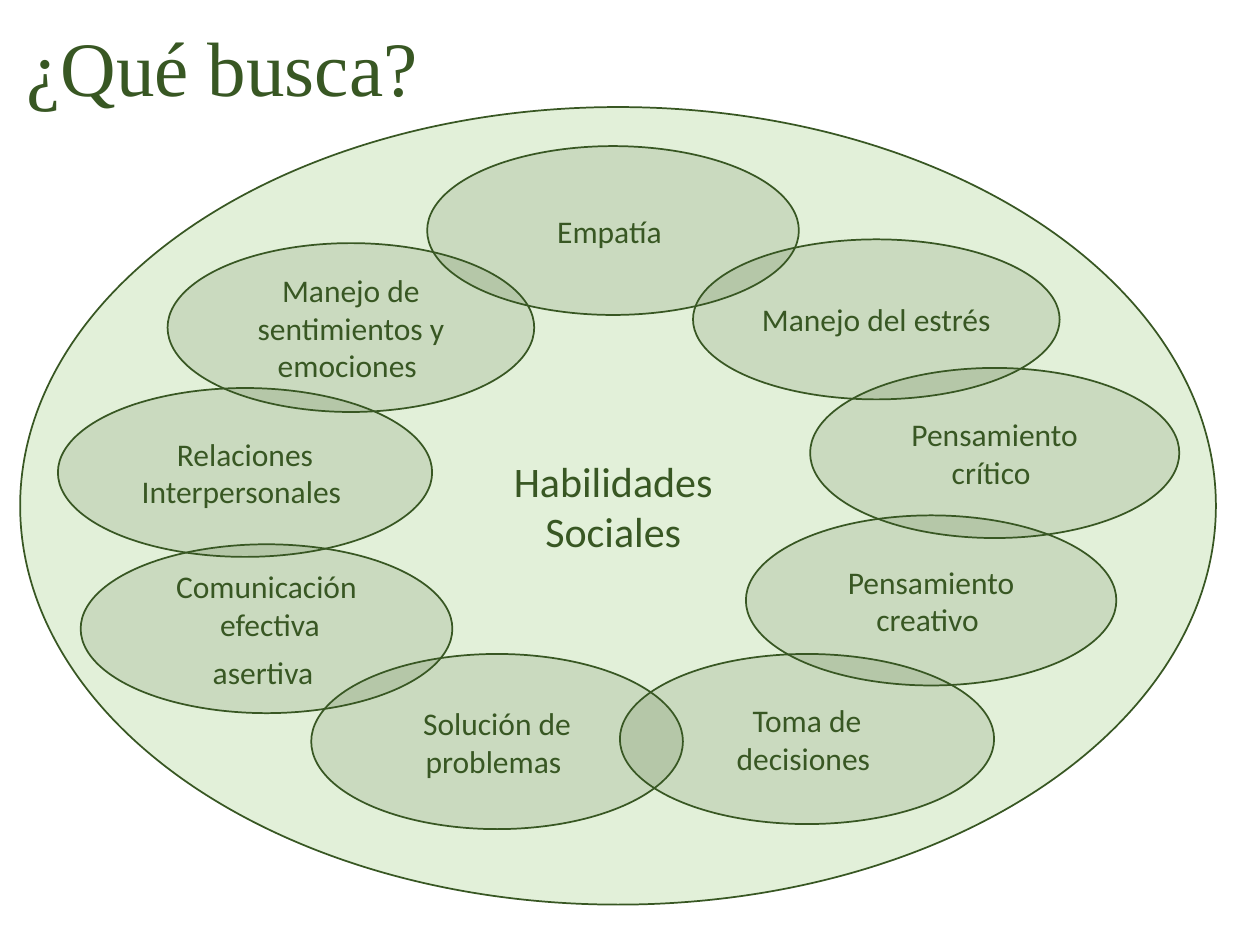
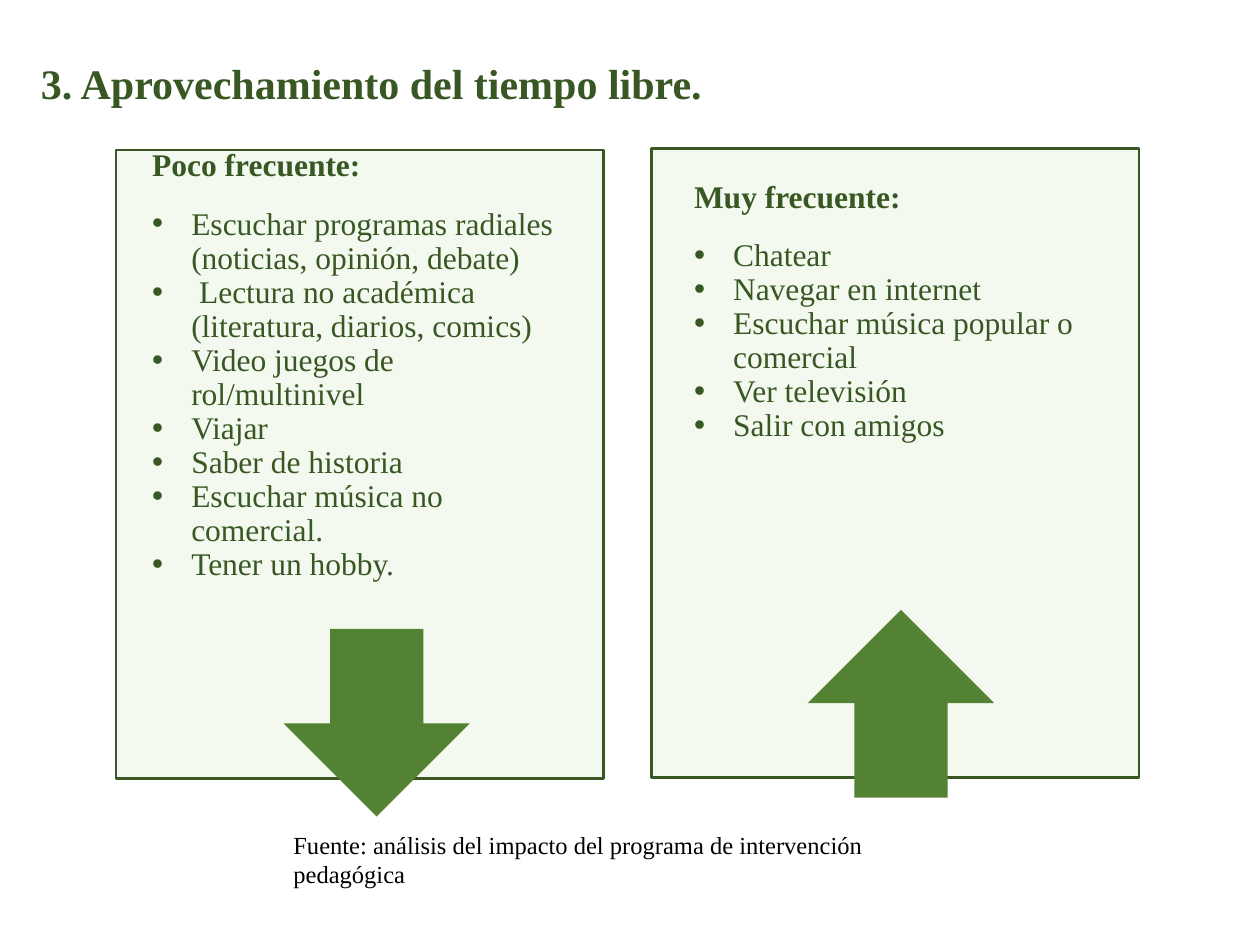
from dataclasses import dataclass

import lxml.etree
import pptx
import pptx.dml.color
import pptx.enum.shapes
import pptx.enum.text
import pptx.oxml.ns
import pptx.presentation
import pptx.shapes.autoshape
import pptx.slide
import pptx.text.text
import pptx.util

EMU_PER_PX = 9144  # 100 px to the inch
COLORS = {
    "forest": "385723",
    "leaf": "548235",
    "mint": "E2F0D9",
    "ink": "000000",
}
SERIF = "Times New Roman"
SANS = "Calibri"
SHAPES = pptx.enum.shapes.MSO_SHAPE
ANCHORS = pptx.enum.text.MSO_ANCHOR
ALIGNS = pptx.enum.text.PP_ALIGN

# Font formats
TITLE = {"size": 44, "name": SERIF, "bold": False}
SECTION_TITLE = {"size": 24, "name": SERIF, "bold": True}
CORE = {"size": 24, "name": SANS}
SKILL = {"size": 18, "name": SANS}
CARD_HEADING = {"size": 18, "name": SERIF, "bold": True}
CARD_ITEM = {"size": 18, "name": SERIF, "bold": False}
SOURCE = {"size": 14, "name": SERIF}

# Paragraph formats
CENTERED = {"alignment": ALIGNS.CENTER}
TIGHT_CENTERED = {"alignment": ALIGNS.CENTER, "line_spacing": 0.9}
TIGHT_LEFT = {"alignment": ALIGNS.LEFT, "line_spacing": 0.9}


@dataclass(frozen=True)
class Frame:
    left: int
    top: int
    width: int
    height: int

    def emu(self) -> list[pptx.util.Emu]:
        lengths = (self.left, self.top, self.width, self.height)
        return [pptx.util.Emu(length * EMU_PER_PX) for length in lengths]


@dataclass(frozen=True)
class Skill:
    frame: Frame
    lines: tuple[str, ...]


@dataclass(frozen=True)
class Card:
    panel: Frame
    text: Frame
    heading: str
    items: tuple[str, ...]
    arrow: Frame
    rotation: int


SKILLS = (
    Skill(Frame(64, 432, 295, 134), ("Comunicación", " efectiva", "asertiva ")),
    Skill(Frame(46, 308, 297, 134), ("Relaciones Interpersonales ",)),
    Skill(Frame(492, 519, 297, 135), ("Toma de decisiones ",)),
    Skill(Frame(247, 519, 295, 139), ("Solución de problemas ",)),
    Skill(Frame(592, 409, 294, 135), ("Pensamiento creativo ",)),
    Skill(Frame(643, 292, 293, 135), ("Pensamiento crítico ",)),
    Skill(Frame(133, 193, 291, 134), ("Manejo de sentimientos y emociones ",)),
    Skill(Frame(550, 190, 291, 127), ("Manejo del estrés ",)),
    Skill(Frame(339, 116, 295, 134), ("Empatía ",)),
)

CARDS = (
    Card(
        Frame(92, 119, 387, 499),
        Frame(111, 149, 349, 318),
        "Poco frecuente:",
        (
            "Escuchar programas radiales (noticias, opinión, debate)",
            " Lectura no académica (literatura, diarios, comics)",
            "Video juegos de rol/multinivel",
            "Viajar",
            "Saber de historia",
            "Escuchar música no comercial.",
            "Tener un hobby.",
        ),
        Frame(225, 499, 148, 149),
        0,
    ),
    Card(
        Frame(517, 118, 387, 499),
        Frame(541, 148, 349, 209),
        "Muy frecuente:",
        (
            "Chatear",
            "Navegar en internet",
            "Escuchar música popular o comercial",
            "Ver televisión",
            "Salir con amigos",
        ),
        Frame(641, 484, 148, 149),
        180,
    ),
)


def rgb(color: str) -> pptx.dml.color.RGBColor:
    return pptx.dml.color.RGBColor.from_string(COLORS[color])


def add_figure(
    page: pptx.slide.Slide,
    kind: pptx.enum.shapes.MSO_SHAPE,
    frame: Frame,
    fill: str,
    opacity: int = 100,
    line_points: float = 0,
) -> pptx.shapes.autoshape.Shape:
    """Draw a preset shape with a flat fill and an optional outline."""
    figure = page.shapes.add_shape(kind, *frame.emu())
    figure.shadow.inherit = False
    figure.fill.solid()
    figure.fill.fore_color.rgb = rgb(fill)
    if opacity < 100:
        color = figure.fill._xPr.find(".//" + pptx.oxml.ns.qn("a:srgbClr"))
        alpha = lxml.etree.SubElement(color, pptx.oxml.ns.qn("a:alpha"))
        alpha.set("val", str(opacity * 1000))
    if line_points:
        figure.line.color.rgb = rgb("forest")
        figure.line.width = pptx.util.Pt(line_points)
    else:
        figure.line.fill.background()
    return figure


def write_paragraph(
    frame: pptx.text.text.TextFrame,
    text: str,
    font: dict,
    layout: dict,
    color: str = "forest",
) -> pptx.text.text._Paragraph:
    """Fill the first empty paragraph, or add another one."""
    para = frame.paragraphs[0]
    if para.runs:
        para = frame.add_paragraph()
    for name, value in layout.items():
        setattr(para, name, value)
    span = para.add_run()
    span.text = text
    for name, value in font.items():
        setattr(span.font, name, pptx.util.Pt(value) if name == "size" else value)
    span.font.color.rgb = rgb(color)
    return para


def add_text_box(
    page: pptx.slide.Slide, frame: Frame, anchor: pptx.enum.text.MSO_ANCHOR
) -> pptx.text.text.TextFrame:
    box = page.shapes.add_textbox(*frame.emu()).text_frame
    box.word_wrap = True
    box.vertical_anchor = anchor
    return box


def add_title(page: pptx.slide.Slide, frame: Frame, text: str, font: dict) -> None:
    box = add_text_box(page, frame, ANCHORS.BOTTOM)
    write_paragraph(box, text, font, TIGHT_CENTERED)


def add_bullet(para: pptx.text.text._Paragraph) -> None:
    properties = para._p.get_or_add_pPr()
    indent = 31 * EMU_PER_PX
    properties.set("marL", str(indent))
    properties.set("indent", str(-indent))
    bullet_font = lxml.etree.SubElement(properties, pptx.oxml.ns.qn("a:buFont"))
    bullet_font.set("typeface", "Arial")
    bullet = lxml.etree.SubElement(properties, pptx.oxml.ns.qn("a:buChar"))
    bullet.set("char", "•")


def add_skill(page: pptx.slide.Slide, skill: Skill) -> None:
    oval = add_figure(page, SHAPES.OVAL, skill.frame, "forest", 14, 1)
    oval.text_frame.vertical_anchor = ANCHORS.MIDDLE
    for number, line in enumerate(skill.lines):
        # A third line stands a little apart from the first two
        gap = {"space_before": pptx.util.Pt(6)} if number == 2 else {}
        write_paragraph(oval.text_frame, line, SKILL, CENTERED | gap)


def add_card(page: pptx.slide.Slide, card: Card) -> None:
    add_figure(page, SHAPES.RECTANGLE, card.panel, "mint", 40, 1.5)
    box = add_text_box(page, card.text, ANCHORS.BOTTOM)
    gap = {"space_after": pptx.util.Pt(14)}
    write_paragraph(box, card.heading, CARD_HEADING, TIGHT_LEFT | gap)
    for item in card.items:
        add_bullet(write_paragraph(box, item, CARD_ITEM, TIGHT_LEFT))


def build_skills_page(page: pptx.slide.Slide) -> None:
    add_title(page, Frame(-30, 14, 428, 81), "¿Qué busca? ", TITLE)
    core = add_figure(page, SHAPES.OVAL, Frame(16, 85, 949, 633), "mint", 100, 1)
    core.text_frame.vertical_anchor = ANCHORS.MIDDLE
    for line in ("Habilidades ", "Sociales "):
        write_paragraph(core.text_frame, line, CORE, CENTERED)
    for skill in SKILLS:
        add_skill(page, skill)


def build_leisure_page(page: pptx.slide.Slide) -> None:
    source = add_text_box(page, Frame(223, 665, 555, 34), ANCHORS.MIDDLE)
    write_paragraph(
        source,
        "Fuente: análisis del impacto del programa de intervención pedagógica",
        SOURCE,
        {"alignment": ALIGNS.LEFT},
        "ink",
    )
    add_title(
        page,
        Frame(0, 10, 598, 81),
        "3. Aprovechamiento del tiempo libre. ",
        SECTION_TITLE,
    )
    for card in CARDS:
        add_card(page, card)
    # Arrows lie over both cards
    for card in CARDS:
        arrow = add_figure(page, SHAPES.DOWN_ARROW, card.arrow, "leaf")
        arrow.rotation = card.rotation


def main() -> None:
    deck = pptx.Presentation()
    deck.slide_width = pptx.util.Emu(1000 * EMU_PER_PX)
    deck.slide_height = pptx.util.Emu(750 * EMU_PER_PX)
    blank = deck.slide_layouts[6]
    for build_page in (build_skills_page, build_leisure_page):
        build_page(deck.slides.add_slide(blank))
    deck.save("out.pptx")


if __name__ == "__main__":
    main()
